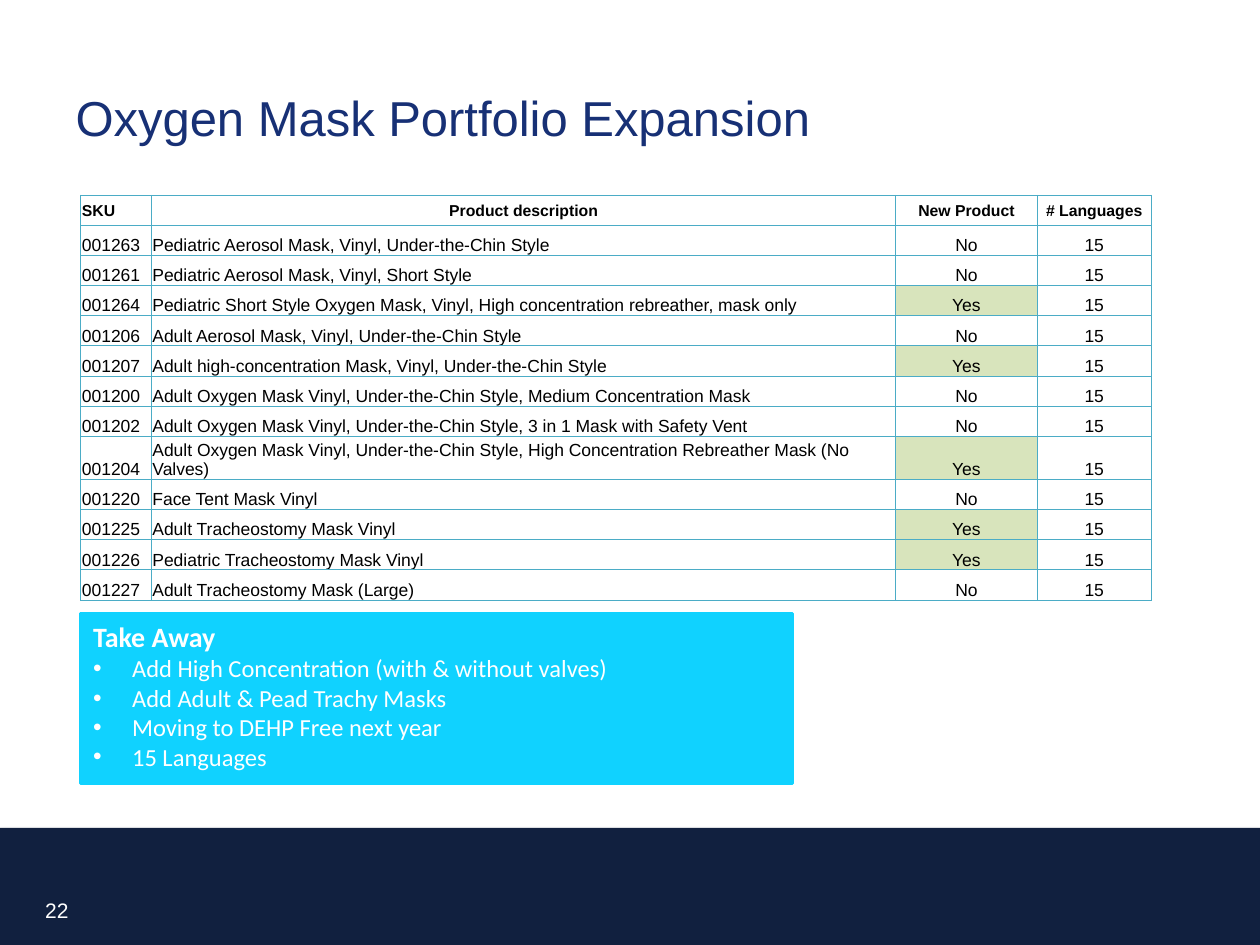
"""Build the oxygen mask portfolio slide on a grid of 100 columns by 75 rows."""
import typing

import lxml.etree
import pptx
import pptx.dml.color
import pptx.enum.shapes
import pptx.enum.text
import pptx.oxml
import pptx.oxml.ns
import pptx.util

ALIGN = pptx.enum.text.PP_ALIGN
ANCHOR = pptx.enum.text.MSO_ANCHOR
RECT = pptx.enum.shapes.MSO_SHAPE.RECTANGLE
NAMES = pptx.oxml.ns.nsdecls("a")


class Area(typing.NamedTuple):
    left: float
    top: float
    width: float
    height: float


class Mask(typing.NamedTuple):
    sku: str
    label: str
    new: bool = False


class Face(typing.NamedTuple):
    name: str
    size: float
    color: str
    bold: bool = False


HEADS = ("SKU", "Product description", "New Product", "# Languages")
WIDTHS = (5.6, 59.1, 11.2, 9.1)
MASKS = (
    Mask("001263", "Pediatric Aerosol Mask, Vinyl, Under-the-Chin Style"),
    Mask("001261", "Pediatric Aerosol Mask, Vinyl, Short Style"),
    Mask("001264", "Pediatric Short Style Oxygen Mask, Vinyl, High concentration rebreather, mask only", True),
    Mask("001206", "Adult Aerosol Mask, Vinyl, Under-the-Chin Style"),
    Mask("001207", "Adult high-concentration Mask, Vinyl, Under-the-Chin Style", True),
    Mask("001200", "Adult Oxygen Mask Vinyl, Under-the-Chin Style, Medium Concentration Mask"),
    Mask("001202", "Adult Oxygen Mask Vinyl, Under-the-Chin Style, 3 in 1 Mask with Safety Vent"),
    Mask("001204", "Adult Oxygen Mask Vinyl, Under-the-Chin Style, High Concentration Rebreather Mask (No Valves)", True),
    Mask("001220", "Face Tent Mask Vinyl"),
    Mask("001225", "Adult Tracheostomy Mask Vinyl", True),
    Mask("001226", "Pediatric Tracheostomy Mask Vinyl", True),
    Mask("001227", "Adult Tracheostomy Mask (Large)"),
)
POINTS = (
    "Add High Concentration (with & without valves)",
    "Add Adult & Pead Trachy Masks",
    "Moving to DEHP Free next year",
    "15 Languages",
)

deck = pptx.Presentation()
deck.slide_width = pptx.util.Inches(10)
deck.slide_height = pptx.util.Inches(7.5)
UNIT = deck.slide_width / 100


def span(count: float) -> int:
    """Turn grid units into a length."""
    return round(count * UNIT)


def tint(code: str) -> pptx.dml.color.RGBColor:
    """Turn a hex string into a colour."""
    return pptx.dml.color.RGBColor.from_string(code)


def style(para, face: Face, align=ALIGN.LEFT) -> None:
    """Set the font and alignment of a paragraph."""
    para.alignment = align
    para.font.name = face.name
    para.font.size = pptx.util.Pt(face.size)
    para.font.bold = face.bold
    para.font.color.rgb = tint(face.color)


def block(slide, area: Area, color: str):
    """Draw a plain filled rectangle."""
    shape = slide.shapes.add_shape(RECT, *map(span, area))
    shape.shadow.inherit = False
    shape.fill.solid()
    shape.fill.fore_color.rgb = tint(color)
    shape.line.fill.background()
    return shape


def band(slide) -> None:
    """Draw the footer band with its soft shadow."""
    shape = block(slide, Area(0, 65.7, 100, 9.3), "11203F")
    glow = shape.element.spPr.find(pptx.oxml.ns.qn("a:effectLst"))
    glow.append(pptx.oxml.parse_xml(
        f'<a:outerShdw {NAMES} blurRad="{pptx.util.Pt(3.1)}" dist="{pptx.util.Pt(1.8)}" dir="5400000">'
        '<a:srgbClr val="000000"><a:alpha val="35000"/></a:srgbClr></a:outerShdw>'))


def title(slide) -> None:
    """Place and format the slide title."""
    shape = slide.shapes.title
    shape.left, shape.top, shape.width, shape.height = map(span, (5, 3, 73.6, 12.5))
    shape.text_frame.text = "Oxygen Mask Portfolio Expansion"
    shape.text_frame.vertical_anchor = ANCHOR.MIDDLE
    style(shape.text_frame.paragraphs[0], Face("Arial", 28, "173075"))


def number(slide) -> None:
    """Write the page number on the footer band."""
    frame = slide.shapes.add_textbox(*map(span, (2.6, 70.7, 7.1, 3.1))).text_frame
    frame.word_wrap = True
    frame.vertical_anchor = ANCHOR.MIDDLE
    frame.text = "22"
    style(frame.paragraphs[0], Face("Arial", 12, "FFFFFF"))


def edge(cell, color: str) -> None:
    """Give a cell thin borders on all four sides."""
    props = cell._tc.get_or_add_tcPr()
    for spot, side in enumerate(("lnL", "lnR", "lnT", "lnB")):
        props.insert(spot, pptx.oxml.parse_xml(
            f'<a:{side} {NAMES} w="{pptx.util.Pt(0.5)}"><a:solidFill>'
            f'<a:srgbClr val="{color}"/></a:solidFill></a:{side}>'))


def fill(cell, text: str, face: Face, align, anchor, color: str = "") -> None:
    """Write and format one table cell."""
    cell.text = text
    cell.vertical_anchor = anchor
    cell.margin_left = cell.margin_right = cell.margin_top = span(0.1)
    cell.margin_bottom = 0
    style(cell.text_frame.paragraphs[0], face, align)
    if color:
        cell.fill.solid()
        cell.fill.fore_color.rgb = tint(color)
    else:
        cell.fill.background()
    edge(cell, "4BACC6")


def grid(slide) -> None:
    """Draw the table of masks."""
    count = len(MASKS) + 1
    area = Area(6.4, 15.5, sum(WIDTHS), 2.39 * count)
    table = slide.shapes.add_table(count, len(HEADS), *map(span, area)).table
    table.first_row = table.horz_banding = False
    for column, width in zip(table.columns, WIDTHS):
        column.width = span(width)
    head, body = Face("Arial", 9, "000000", True), Face("Arial", 10, "000000")
    for col, text in enumerate(HEADS):
        fill(table.cell(0, col), text, head, ALIGN.CENTER if col else ALIGN.LEFT, ANCHOR.MIDDLE)
    for row, mask in enumerate(MASKS, 1):
        texts = (mask.sku, mask.label, "Yes" if mask.new else "No", "15")
        for col, text in enumerate(texts):
            align = ALIGN.CENTER if col > 1 else ALIGN.LEFT
            color = "D8E4BC" if mask.new and col == 2 else ""
            fill(table.cell(row, col), text, body, align, ANCHOR.BOTTOM, color)


def notice(slide) -> None:
    """Draw the take away box with its bullets."""
    shape = block(slide, Area(6.4, 48.7, 56.5, 13.5), "10D2FF")
    shape.line.color.rgb = tint("10D2FF")
    shape.line.width = pptx.util.Pt(2)
    frame = shape.text_frame
    frame.word_wrap = True
    frame.vertical_anchor = ANCHOR.TOP
    frame.text = "Take Away"
    style(frame.paragraphs[0], Face("Calibri", 16, "FFFFFF", True))
    for text in POINTS:
        para = frame.add_paragraph()
        para.text = text
        props = para._p.get_or_add_pPr()
        props.set("marL", str(span(3.1)))
        props.set("indent", str(-span(3.1)))
        font = lxml.etree.SubElement(props, pptx.oxml.ns.qn("a:buFont"))
        font.set("typeface", "Arial")
        mark = lxml.etree.SubElement(props, pptx.oxml.ns.qn("a:buChar"))
        mark.set("char", "•")
        style(para, Face("Calibri", 14, "FFFFFF"))


def main() -> None:
    """Build and save the slide."""
    slide = deck.slides.add_slide(deck.slide_layouts[5])
    for draw in (band, title, number, grid, notice):
        draw(slide)
    deck.save("out.pptx")


if __name__ == "__main__":
    main()
